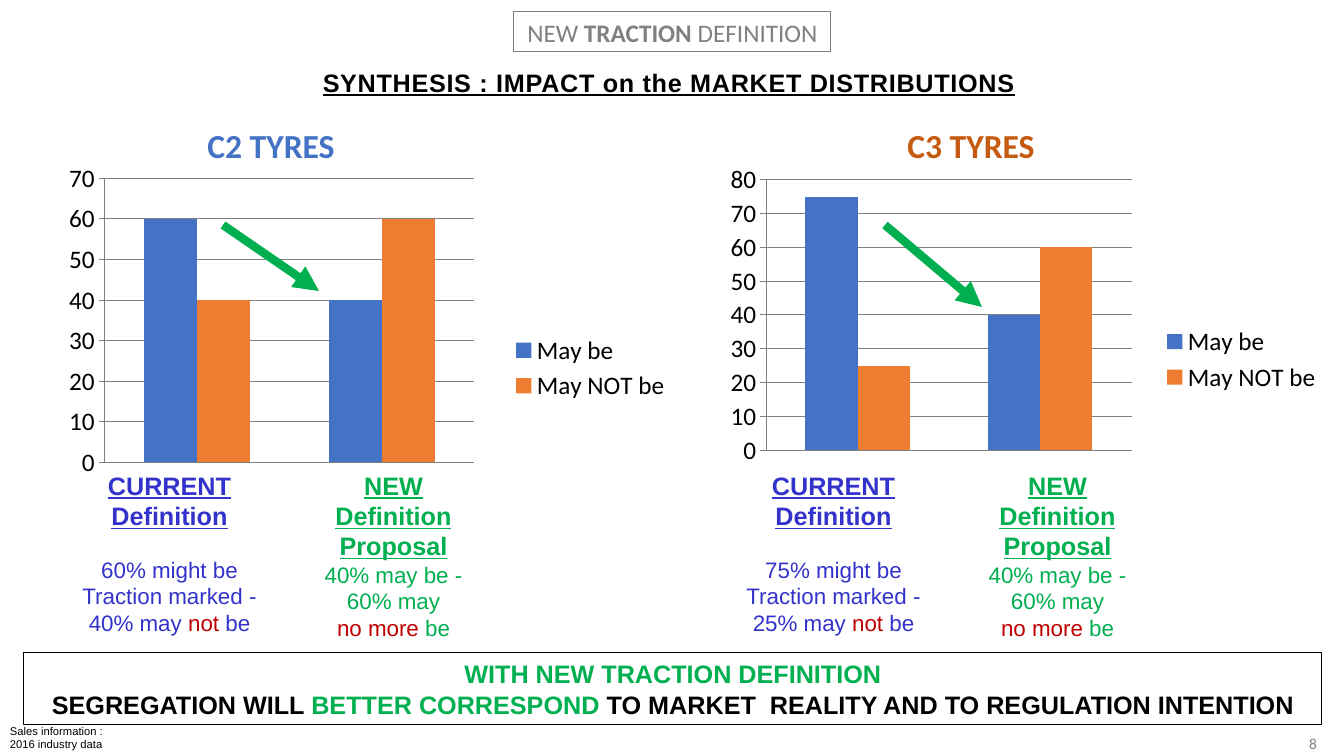
"""Build the slide on traction definition and its impact on the tyre market."""
from collections import namedtuple

from lxml import etree
from pptx import Presentation
from pptx.chart.data import CategoryChartData
from pptx.dml.color import RGBColor
from pptx.enum.chart import XL_CHART_TYPE, XL_LEGEND_POSITION, XL_TICK_MARK
from pptx.enum.shapes import MSO_CONNECTOR, MSO_SHAPE
from pptx.enum.text import MSO_ANCHOR, PP_ALIGN
from pptx.oxml import parse_xml
from pptx.oxml.ns import nsdecls, qn
from pptx.util import Emu, Pt

COLUMNS = XL_CHART_TYPE.COLUMN_CLUSTERED
LEGEND_RIGHT = XL_LEGEND_POSITION.RIGHT
TICK_OUT = XL_TICK_MARK.OUTSIDE
STRAIGHT = MSO_CONNECTOR.STRAIGHT
RECT = MSO_SHAPE.RECTANGLE
TOP, MIDDLE = MSO_ANCHOR.TOP, MSO_ANCHOR.MIDDLE
LEFT, CENTER, RIGHT = PP_ALIGN.LEFT, PP_ALIGN.CENTER, PP_ALIGN.RIGHT

EMU_PER_PX = 914400 / 100.8
SLIDE_W, SLIDE_H = 1344, 756
PANEL_STEP = 664

Style = namedtuple("Style", "size color font bold underline spacing",
                   defaults=("Arial", False, False, 0))
Panel = namedtuple("Panel", "title title_box color chart_box plot top values arrow left")


class Theme:
    """Colours and type sizes of the slide."""
    BLACK, WHITE, GREY = "000000", "FFFFFF", "808080"
    BLUE, ORANGE, RUST = "4472C4", "ED7D31", "C55A11"
    INDIGO, GREEN, RED = "3333CC", "00B050", "C00000"
    NOTE, NUMBER, BODY, HEAD, PANEL = 8, 11, 16, 18, 24


def px(*lengths):
    """Turn pixel lengths into EMU."""
    return [Emu(round(n * EMU_PER_PX)) for n in lengths]


def rgb(color):
    """Turn a hex string into a colour."""
    return RGBColor.from_string(color)


def fill_text(tf, paragraphs, align=CENTER, wrap=True, anchor=TOP):
    """Write paragraphs given as lists of (text, style) runs."""
    tf.word_wrap = wrap
    tf.vertical_anchor = anchor
    for i, runs in enumerate(paragraphs):
        p = tf.add_paragraph() if i else tf.paragraphs[0]
        p.alignment = align
        for text, style in runs:
            r = p.add_run()
            r.text = text
            font = r.font
            font.name, font.size = style.font, Pt(style.size)
            font.bold, font.underline = style.bold, style.underline
            font.color.rgb = rgb(style.color)
            if style.spacing:
                r._r.get_or_add_rPr().set("spc", str(style.spacing))


def add_text(s, box, paragraphs, **layout):
    """Add a text box and return its text frame."""
    tf = s.shapes.add_textbox(*px(*box)).text_frame
    fill_text(tf, paragraphs, **layout)
    return tf


def add_frame(s, box, paragraphs, line, fill=None):
    """Add an outlined rectangle holding text."""
    sp = s.shapes.add_shape(RECT, *px(*box))
    sp.shadow.inherit = False
    if fill:
        sp.fill.solid()
        sp.fill.fore_color.rgb = rgb(fill)
    else:
        sp.fill.background()
    sp.line.color.rgb = rgb(line)
    sp.line.width = Pt(0.75)
    fill_text(sp.text_frame, paragraphs, wrap=bool(fill), anchor=MIDDLE)


def add_arrow(s, ends):
    """Add a thick green arrow."""
    cn = s.shapes.add_connector(STRAIGHT, *px(*ends))
    cn.line.color.rgb = rgb(Theme.GREEN)
    cn.line.width = Pt(6)
    etree.SubElement(cn.line._get_or_add_ln(), qn("a:tailEnd"), type="triangle")
    etree.SubElement(cn._element.spPr, qn("a:effectLst"))


def place_plot(chart, plot):
    """Fix the inner plot area as fractions of the chart."""
    modes = "".join(f'<c:{n}Mode val="edge"/>' for n in "xy")
    sizes = "".join(f'<c:{n} val="{v}"/>' for n, v in zip("xywh", plot))
    area = chart._chartSpace.chart.plotArea
    for old in area.findall(qn("c:layout")):
        area.remove(old)
    area.insert(0, parse_xml(
        f'<c:layout {nsdecls("c")}><c:manualLayout><c:layoutTarget val="inner"/>'
        f'{modes}{sizes}</c:manualLayout></c:layout>'))


def add_column_chart(s, box, plot, top, values):
    """Add a clustered column chart of the two market shares."""
    data = CategoryChartData()
    data.categories = ["1", "2"]
    for name, shares in zip(("May be ", "May NOT be"), values):
        data.add_series(name, shares)
    chart = s.shapes.add_chart(COLUMNS, *px(*box), data).chart
    chart.has_title = False
    chart.font.name, chart.font.size = "Calibri", Pt(Theme.HEAD)
    chart.font.color.rgb = rgb(Theme.BLACK)
    chart.has_legend = True
    chart.legend.position = LEGEND_RIGHT
    chart.legend.include_in_layout = False
    chart.category_axis.visible = False
    axis = chart.value_axis
    axis.minimum_scale, axis.maximum_scale, axis.major_unit = 0, top, 10
    axis.major_tick_mark = TICK_OUT
    axis.has_major_gridlines = True
    for line in (axis.format.line, axis.major_gridlines.format.line):
        line.color.rgb = rgb(Theme.GREY)
        line.width = Pt(0.75)
    bars = chart.plots[0]
    bars.gap_width, bars.overlap, bars.vary_by_categories = 150, 0, False
    for series, color in zip(bars.series, (Theme.BLUE, Theme.ORANGE)):
        series.format.fill.solid()
        series.format.fill.fore_color.rgb = rgb(color)
    place_plot(chart, plot)


def add_captions(s, left, values):
    """Add the current and proposed definitions below a chart."""
    (old_may, new_may), (old_not, new_not) = values
    body = Style(Theme.BODY, Theme.INDIGO)
    head = Style(Theme.HEAD, Theme.INDIGO, bold=True, underline=True)
    red = body._replace(color=Theme.RED)
    tf = add_text(s, (left, 465, 331, 179), [
        [("CURRENT", head)], [("Definition", head)],
        [(f"{old_may}% might be", body)], [("Traction marked -", body)],
        [(f"{old_not}% may ", body), ("not", red), (" be", body)]])
    tf.paragraphs[2].space_before = Pt(18)
    body, head = (style._replace(color=Theme.GREEN) for style in (body, head))
    add_text(s, (left + 229, 465, 321, 211), [
        [("NEW", head)], [("Definition", head)], [("Proposal", head)],
        [(f"{new_may}% may be -", body)], [(f"{new_not}% may", body)],
        [("no more ", red), ("be", body)]])


def add_panel(s, panel):
    """Add one tyre class: chart, title, arrow and captions."""
    add_column_chart(s, panel.chart_box, panel.plot, panel.top, panel.values)
    style = Style(Theme.PANEL, panel.color, "Calibri", True)
    add_text(s, panel.title_box, [[(panel.title, style)]])
    add_captions(s, panel.left, panel.values)
    add_arrow(s, panel.arrow)


def main():
    """Build and save the slide."""
    prs = Presentation()
    prs.slide_width, prs.slide_height = px(SLIDE_W, SLIDE_H)
    s = prs.slides.add_slide(prs.slide_layouts[6])

    grey = Style(Theme.HEAD, Theme.GREY, "Calibri")
    add_frame(s, (514, 12, 317, 40), [[
        ("NEW", grey), (" TRACTION ", grey._replace(bold=True)),
        ("DEFINITION", grey)]], Theme.GREY)
    title = Style(Theme.HEAD, Theme.BLACK, bold=True, underline=True, spacing=50)
    add_text(s, (309, 62, 720, 40),
             [[("SYNTHESIS : IMPACT on the MARKET DISTRIBUTIONS", title)]], wrap=False)

    panels = [
        Panel("C2 TYRES", (174, 120, 194, 50), Theme.BLUE, (37, 156, 644, 424),
              (0.105, 0.053, 0.574, 0.67), 70, ((60, 40), (40, 60)),
              (223, 225, 319, 291), 4),
        Panel("C3 TYRES", (885, 120, 172, 50), Theme.RUST, (704, 137, 628, 445),
              (0.099, 0.096, 0.582, 0.608), 80, ((75, 40), (25, 60)),
              (885, 225, 982, 307), 4 + PANEL_STEP),
    ]
    for panel in panels:
        add_panel(s, panel)

    black = Style(Theme.HEAD, Theme.BLACK, bold=True)
    green = black._replace(color=Theme.GREEN)
    add_frame(s, (24, 653, 1298, 72), [
        [("WITH NEW TRACTION DEFINITION", green)],
        [("SEGREGATION WILL ", black), ("BETTER CORRESPOND ", green),
         ("TO MARKET  REALITY AND TO REGULATION INTENTION", black)]],
        Theme.BLACK, Theme.WHITE)
    note = Style(Theme.NOTE, Theme.BLACK)
    add_text(s, (0, 719, 120, 37), [[("Sales information :", note)],
                                    [("2016 industry data", note)]],
             align=LEFT, wrap=False)
    add_text(s, (1289, 729, 38, 29), [[("8", grey._replace(size=Theme.NUMBER))]],
             align=RIGHT, wrap=False)
    prs.save("out.pptx")


if __name__ == "__main__":
    main()
